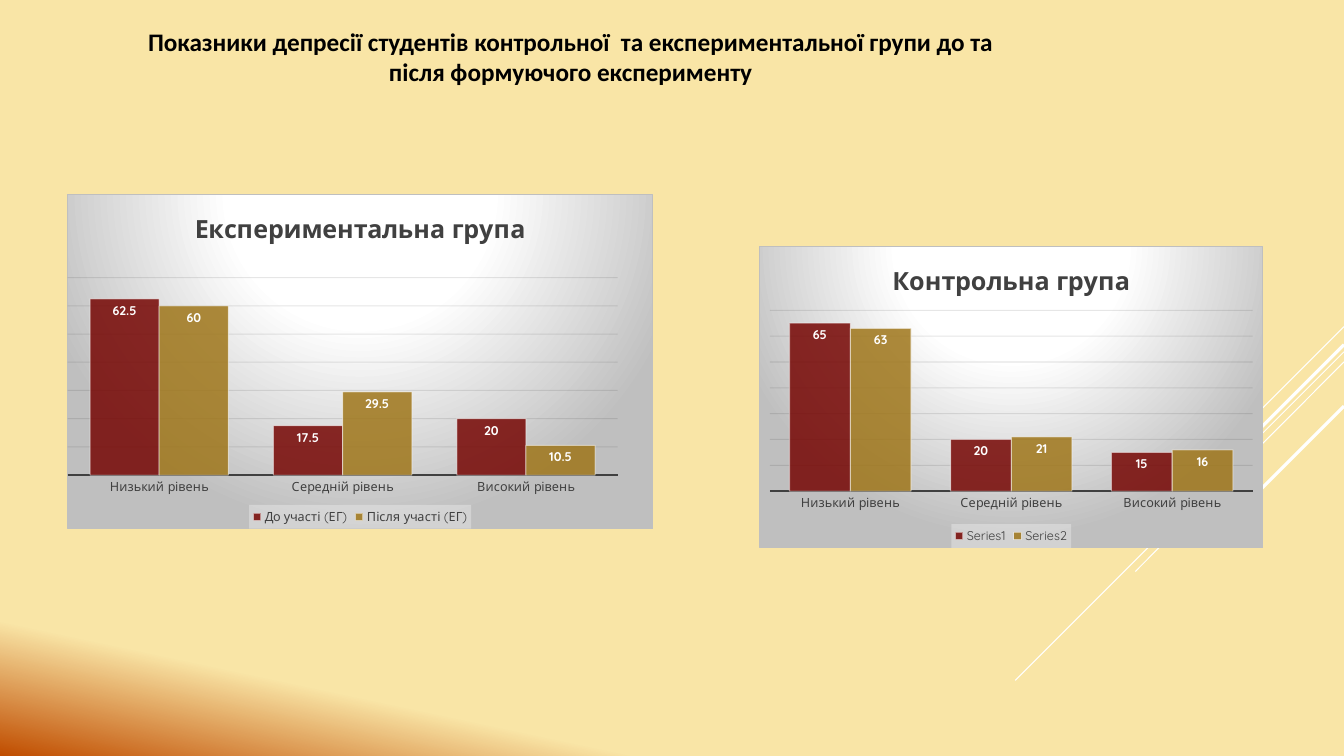
from lxml.etree import SubElement
from pptx import Presentation
from pptx.chart.data import CategoryChartData
from pptx.dml.color import RGBColor
from pptx.enum.chart import XL_CHART_TYPE, XL_LABEL_POSITION, XL_LEGEND_POSITION, XL_TICK_MARK
from pptx.enum.shapes import MSO_CONNECTOR
from pptx.enum.text import MSO_ANCHOR, PP_ALIGN
from pptx.oxml import parse_xml
from pptx.oxml.ns import nsdecls, qn
from pptx.util import Inches, Pt

NAMESPACES = nsdecls("a", "c")
LEVELS = ["Низький рівень", "Середній рівень", "Високий рівень"]
BAR_COLORS = ["760603", "9F761A"]
CHART_FILL = f"""<c:spPr {NAMESPACES}>
  <a:gradFill>
    <a:gsLst>
      <a:gs pos="0"><a:srgbClr val="FFFFFF"/></a:gs>
      <a:gs pos="39000"><a:srgbClr val="FFFFFF"/></a:gs>
      <a:gs pos="100000"><a:srgbClr val="BFBFBF"/></a:gs>
    </a:gsLst>
    <a:path path="circle"><a:fillToRect l="50000" t="-80000" r="50000" b="180000"/></a:path>
  </a:gradFill>
  <a:ln w="9525"><a:solidFill><a:srgbClr val="BFBFBF"/></a:solidFill></a:ln>
</c:spPr>"""
LEGEND_FILL = f"""<c:spPr {NAMESPACES}>
  <a:solidFill><a:srgbClr val="F2F2F2"><a:alpha val="39000"/></a:srgbClr></a:solidFill>
</c:spPr>"""
PLOT_LAYOUT = f"""<c:layout {NAMESPACES}><c:manualLayout>
  <c:layoutTarget val="inner"/><c:xMode val="edge"/><c:yMode val="edge"/>
  <c:x val="0"/><c:y val="0.25"/><c:w val="0.94"/><c:h val="0.59"/>
</c:manualLayout></c:layout>"""


def style_font(font, size, color, bold=False, name="Quicksand"):
    font.size, font.bold, font.name = Pt(size), bold, name
    font.color.rgb = RGBColor.from_string(color)


def style_line(line, color, width):
    line.color.rgb = RGBColor.from_string(color)
    line.width = Pt(width)


deck = Presentation()
deck.slide_width, deck.slide_height = Inches(13.33), Inches(7.5)
page = deck.slides.add_slide(deck.slide_layouts[5])

background = page.background.fill
background.gradient()
background.gradient_angle = 258
for stop, position, color in zip(background.gradient_stops, [0.87, 1], ["F9E5A6", "C04D00"]):
    stop.position = position
    stop.color.rgb = RGBColor.from_string(color)

# Diagonal rays from the right edge: start height, end point, width
for start_y, end_x, end_y, width in [
    (3.24, 12.33, 4.24, 0.75),
    (3.49, 10.07, 6.75, 0.75),
    (3.59, 11.26, 5.67, 0.75),
    (3.42, 11.42, 5.33, 2.25),
    (4.03, 11.94, 5.42, 2.25),
]:
    ray = page.shapes.add_connector(
        MSO_CONNECTOR.STRAIGHT, Inches(13.33), Inches(start_y), Inches(end_x), Inches(end_y))
    style_line(ray.line, "FFFFFF", width)
    SubElement(ray.element.spPr, qn("a:effectLst"))

title = page.shapes.title
title.left, title.top, title.width, title.height = map(Inches, (1.34, 0.21, 8.64, 0.71))
title.text_frame.text = ("Показники депресії студентів контрольної  та експериментальної групи "
                         "до та після формуючого експерименту")
title.text_frame.word_wrap = True
title.text_frame.vertical_anchor = MSO_ANCHOR.TOP
para = title.text_frame.paragraphs[0]
para.alignment = PP_ALIGN.CENTER
style_font(para.font, 18, "000000", True, "Calibri")

groups = [
    ("Експериментальна група", (0.66, 1.92, 5.82, 3.33), PLOT_LAYOUT,
     {"До участі (ЕГ)": (62.5, 17.5, 20), "Після участі (ЕГ)": (60, 29.5, 10.5)}),
    ("Контрольна група", (7.53, 2.44, 5, 3), None,
     {"Series1": (65, 20, 15), "Series2": (63, 21, 16)}),
]
for heading, place, layout, results in groups:
    data = CategoryChartData()
    data.categories = LEVELS
    for name, values in results.items():
        data.add_series(name, values)
    chart = page.shapes.add_chart(
        XL_CHART_TYPE.COLUMN_CLUSTERED, *map(Inches, place), data).chart
    style_font(chart.font, 10, "FFFFFF")

    chart.has_title = True
    chart.chart_title.include_in_layout = False
    chart.chart_title.text_frame.text = heading
    style_font(chart.chart_title.text_frame.paragraphs[0].font, 18, "404040", True)

    chart.has_legend = True
    chart.legend.position = XL_LEGEND_POSITION.BOTTOM
    chart.legend.include_in_layout = False
    style_font(chart.legend.font, 9, "404040")

    category_axis = chart.category_axis
    category_axis.major_tick_mark = XL_TICK_MARK.NONE
    style_font(category_axis.tick_labels.font, 9, "404040")
    style_line(category_axis.format.line, "404040", 1.5)

    value_axis = chart.value_axis
    value_axis.visible = False
    value_axis.minimum_scale, value_axis.maximum_scale, value_axis.major_unit = 0, 70, 10
    style_line(value_axis.major_gridlines.format.line, "0D0D0D", 0.75)

    plot = chart.plots[0]
    plot.gap_width, plot.overlap, plot.vary_by_categories = 65, 0, False
    for series, color in zip(plot.series, BAR_COLORS):
        series.format.fill.solid()
        series.format.fill.fore_color.rgb = RGBColor.from_string(color)
        style_line(series.format.line, "FFFFFF", 0.75)
        labels = series.data_labels
        labels.show_value = True
        labels.position = XL_LABEL_POSITION.INSIDE_END
        style_font(labels.font, 9, "FFFFFF", True)

    root = chart.element
    for query, opacity in [
        ("//c:ser/c:spPr/a:solidFill/a:srgbClr", 85),
        ("//c:ser/c:spPr/a:ln//a:srgbClr", 50),
        ("//c:majorGridlines//a:srgbClr", 10),
    ]:
        for tint in root.xpath(query):
            SubElement(tint, qn("a:alpha")).set("val", str(opacity * 1000))
    root.find(qn("c:chart")).addnext(parse_xml(CHART_FILL))
    root.xpath("//c:legend/c:overlay")[0].addnext(parse_xml(LEGEND_FILL))
    if layout:
        plot_area = root.xpath("//c:plotArea")[0]
        for automatic in plot_area.findall(qn("c:layout")):
            plot_area.remove(automatic)
        plot_area.insert(0, parse_xml(layout))

deck.save("out.pptx")
